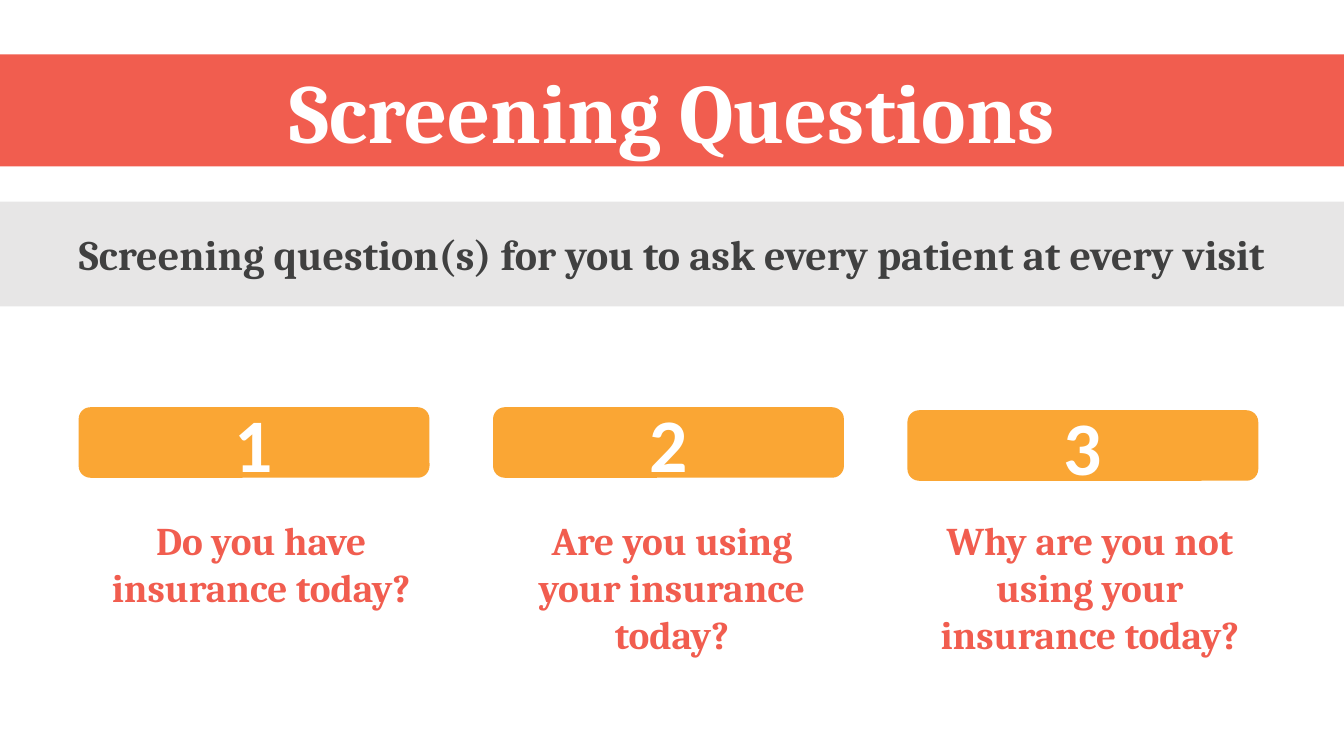
from pptx import Presentation
from pptx import util as u
from pptx.dml import color
from pptx.enum import shapes, text

PX = 9144
CORAL, AMBER, GREY, DARK, WHITE = "F15D4F", "FAA634", "E7E6E6", "404040", "FFFFFF"
RECT = shapes.MSO_SHAPE.RECTANGLE
ROUND = shapes.MSO_SHAPE.ROUNDED_RECTANGLE


def px(n):
    """Turn whole px into EMU."""
    return u.Emu(n * PX)


def rgb(value):
    """Turn a hex string into a colour."""
    return color.RGBColor.from_string(value)


def write(sp, lines, size, ink, font="Cambria", anchor=text.MSO_ANCHOR.MIDDLE):
    """Write centred bold paragraphs into a shape."""
    tf = sp.text_frame
    tf.word_wrap = True
    tf.auto_size = text.MSO_AUTO_SIZE.NONE
    tf.vertical_anchor = anchor
    for i, line in enumerate(lines):
        p = tf.add_paragraph() if i else tf.paragraphs[0]
        p.alignment = text.PP_ALIGN.CENTER
        r = p.add_run()
        r.text = line
        r.font.name, r.font.size, r.font.bold = font, u.Pt(size), True
        r.font.color.rgb = rgb(ink)


def add_box(s, kind, box, fill=None):
    """Add an outline-free shape, filled when a colour is given."""
    sp = s.shapes.add_shape(kind, *map(px, box))
    sp.shadow.inherit = False
    sp.line.fill.background()
    if fill:
        sp.fill.solid()
        sp.fill.fore_color.rgb = rgb(fill)
    else:
        sp.fill.background()
    return sp


def add_title(s, box, title):
    """Place the title placeholder as a coral band."""
    sp = s.shapes.title
    sp.left, sp.top, sp.width, sp.height = map(px, box)
    sp.fill.solid()
    sp.fill.fore_color.rgb = rgb(CORAL)
    write(sp, [title], 60, WHITE, anchor=text.MSO_ANCHOR.TOP)


def add_subtitle(s, box, line):
    """Add the grey band with its heading."""
    write(add_box(s, RECT, box, GREY), [line], 30, DARK)


def add_question(s, box, number, lines, offset, width, height):
    """Add a question ending at the foot of the box and its number bar on top."""
    left, top, bar_width, total = box
    question = (left + offset, top + total - height, width, height)
    write(add_box(s, ROUND, question), lines, 28, CORAL)
    bar = add_box(s, ROUND, (left, top, bar_width, 70), AMBER)
    write(bar, [str(number)], 54, WHITE, "Calibri")


def main():
    """Build and save the screening slide."""
    prs = Presentation()
    prs.slide_width, prs.slide_height = px(1333), px(750)
    s = prs.slides.add_slide(prs.slide_layouts[5])
    add_title(s, (0, 54, 1333, 111), "Screening Questions")
    add_subtitle(s, (0, 200, 1333, 104),
                 "Screening question(s) for you to ask every patient at every visit")
    questions = [
        (404, ["Do you have insurance today?"], 7, 348, 233),
        (404, ["Are you using your insurance today?"], 6, 343, 185),
        (407, ["Why are you not using your", "insurance today?"], 0, 362, 185),
    ]
    for i, (top, *details) in enumerate(questions):
        add_question(s, (78 + 411 * i, top, 348, 675 - top), i + 1, *details)
    prs.save("out.pptx")


if __name__ == "__main__":
    main()
